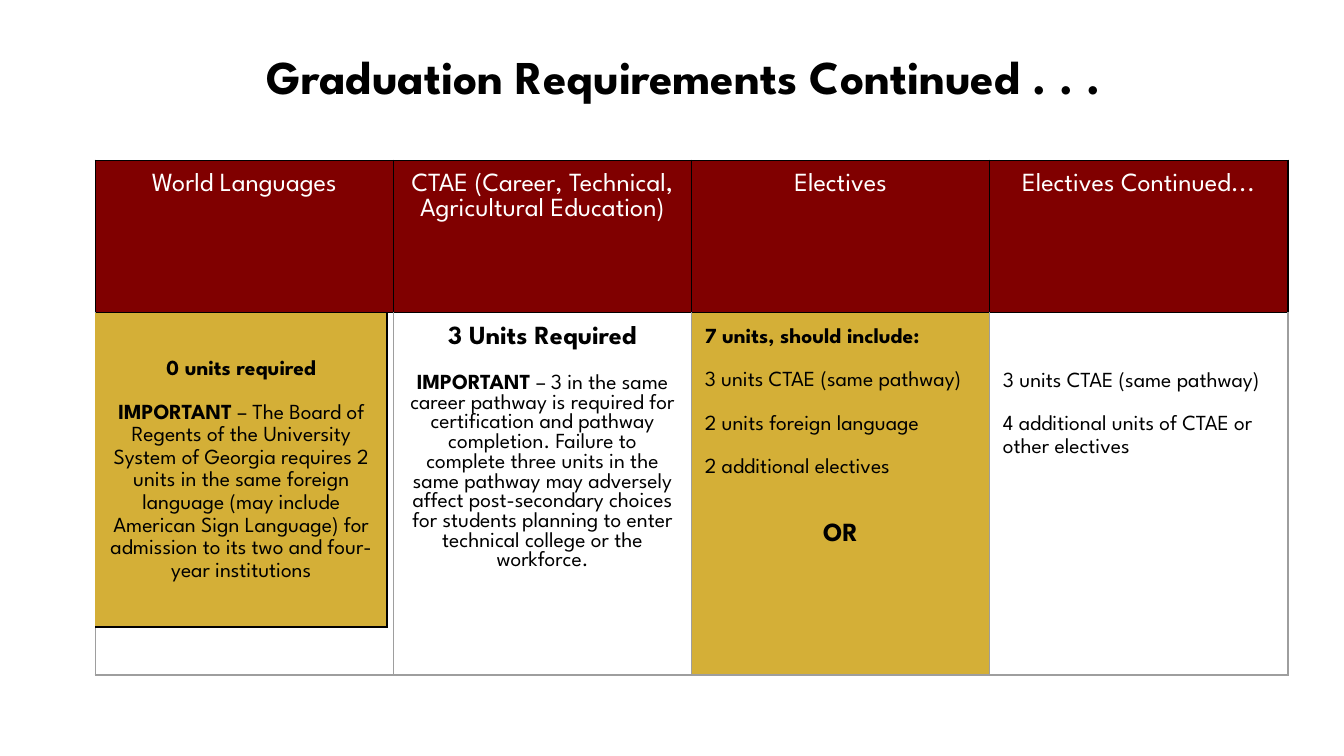
import pptx
import pptx.util
import pptx.dml.color
import pptx.enum.text
import lxml.etree

Cm, Pt = pptx.util.Cm, pptx.util.Pt
LEFT = pptx.enum.text.PP_ALIGN.LEFT
CENTER = pptx.enum.text.PP_ALIGN.CENTER
MIDDLE = pptx.enum.text.MSO_ANCHOR.MIDDLE
NS = "http://schemas.openxmlformats.org/drawingml/2006/main"
RED, GOLD, BLACK, WHITE, GRAY = "800000", "D4AF37", "000000", "FFFFFF", "9E9E9E"


def write(tf, paragraphs, color=BLACK):
    for i, (runs, size, align, spacing, before) in enumerate(paragraphs):
        p = tf.paragraphs[0] if i == 0 else tf.add_paragraph()
        p.alignment, p.line_spacing, p.space_before = align, spacing, Pt(before)
        p.font.name, p.font.size = "League Spartan", Pt(size)
        p.font.color.rgb = pptx.dml.color.RGBColor.from_string(color)
        for text, bold in runs:
            r = p.add_run()
            r.text, r.font.bold = text, bold


def style_cell(cell, fill, borders):
    cell.margin_left = cell.margin_right = cell.margin_top = cell.margin_bottom = Cm(0.25)
    tcPr = cell._tc.get_or_add_tcPr()
    for side in "LRTB":
        color, width = borders.get(side, (None, 0))
        ln = lxml.etree.SubElement(tcPr, f"{{{NS}}}ln{side}", w=str(Pt(width)))
        if color:
            solid = lxml.etree.SubElement(ln, f"{{{NS}}}solidFill")
            lxml.etree.SubElement(solid, f"{{{NS}}}srgbClr", val=color)
        else:
            lxml.etree.SubElement(ln, f"{{{NS}}}noFill")
    if fill:
        cell.fill.solid()
        cell.fill.fore_color.rgb = pptx.dml.color.RGBColor.from_string(fill)
    else:
        cell.fill.background()


prs = pptx.Presentation()
prs.slide_width, prs.slide_height = Cm(25.4), Cm(14.29)
s = prs.slides.add_slide(prs.slide_layouts[6])

sp = s.shapes.add_textbox(Cm(1.09), Cm(0.63), Cm(23.67), Cm(1.6))
tf = sp.text_frame
tf.word_wrap = True
tf.vertical_anchor = MIDDLE
write(tf, [([("Graduation Requirements Continued . . .", True)], 25.2, CENTER, 1, 0)])

headers = [
    "World Languages",
    "CTAE (Career, Technical, Agricultural Education)",
    "Electives",
    "Electives Continued...",
]
ctae = [
    ([("3 Units Required", True)], 14, CENTER, 1, 0),
    ([("IMPORTANT ", True),
      ("– 3 in the same career pathway is required for certification and pathway "
       "completion. Failure to complete three units in the same pathway may adversely "
       "affect post-secondary choices for students planning to enter technical college "
       "or the workforce.", False)], 11.5, CENTER, 1, 13),
]
electives = [
    ([(text, bold)], 11.5, LEFT, 1.15, 11)
    for text, bold in [
        ("7 units, should include:", True),
        ("3 units CTAE (same pathway)", False),
        ("2 units foreign language", False),
        ("2 additional electives", False),
    ]
] + [([("OR", True)], 14, CENTER, 1, 24)]
more_electives = [
    ([(text, False)], 11.5, LEFT, 1.15, 11)
    for text in ["3 units CTAE (same pathway)", "4 additional units of CTAE or other electives"]
]
bodies = [([], None), (ctae, None), (electives, GOLD), (more_electives, None)]

table = s.shapes.add_table(2, 4, Cm(1.8), Cm(3.03), Cm(22.54), Cm(9.73)).table
table.first_row = table.horz_banding = False
table.rows[0].height, table.rows[1].height = Cm(2.88), Cm(6.85)
for col, (header, (body, fill)) in enumerate(zip(headers, bodies)):
    table.columns[col].width = Cm(5.635)
    head, cell = table.cell(0, col), table.cell(1, col)
    style_cell(head, RED, {side: (BLACK, 0.75) for side in "LRTB"})
    write(head.text_frame, [([(header, False)], 14, CENTER, 1, 0)], WHITE)
    style_cell(cell, fill, {"T": (BLACK, 0.75), **{side: (GRAY, 0.75) for side in "LRB"}})
    write(cell.text_frame, body)
table.cell(1, 3).margin_top = Cm(1.07)

languages = [
    ([("0 units required", True)], 11.5, CENTER, 1.15, 11),
    ([("IMPORTANT ", True),
      ("– The Board of Regents of the University System of Georgia requires 2 units in "
       "the same foreign language (may include American Sign Language) for admission to "
       "its two and four-year institutions", False)], 11.5, CENTER, 1.15, 11),
]
table = s.shapes.add_table(1, 1, Cm(1.8), Cm(5.92), Cm(5.52), Cm(5.24)).table
table.first_row = table.horz_banding = False
cell = table.cell(0, 0)
style_cell(cell, GOLD, {"R": (BLACK, 1), "B": (BLACK, 1)})
cell.vertical_anchor = MIDDLE
write(cell.text_frame, languages)

prs.save("out.pptx")
